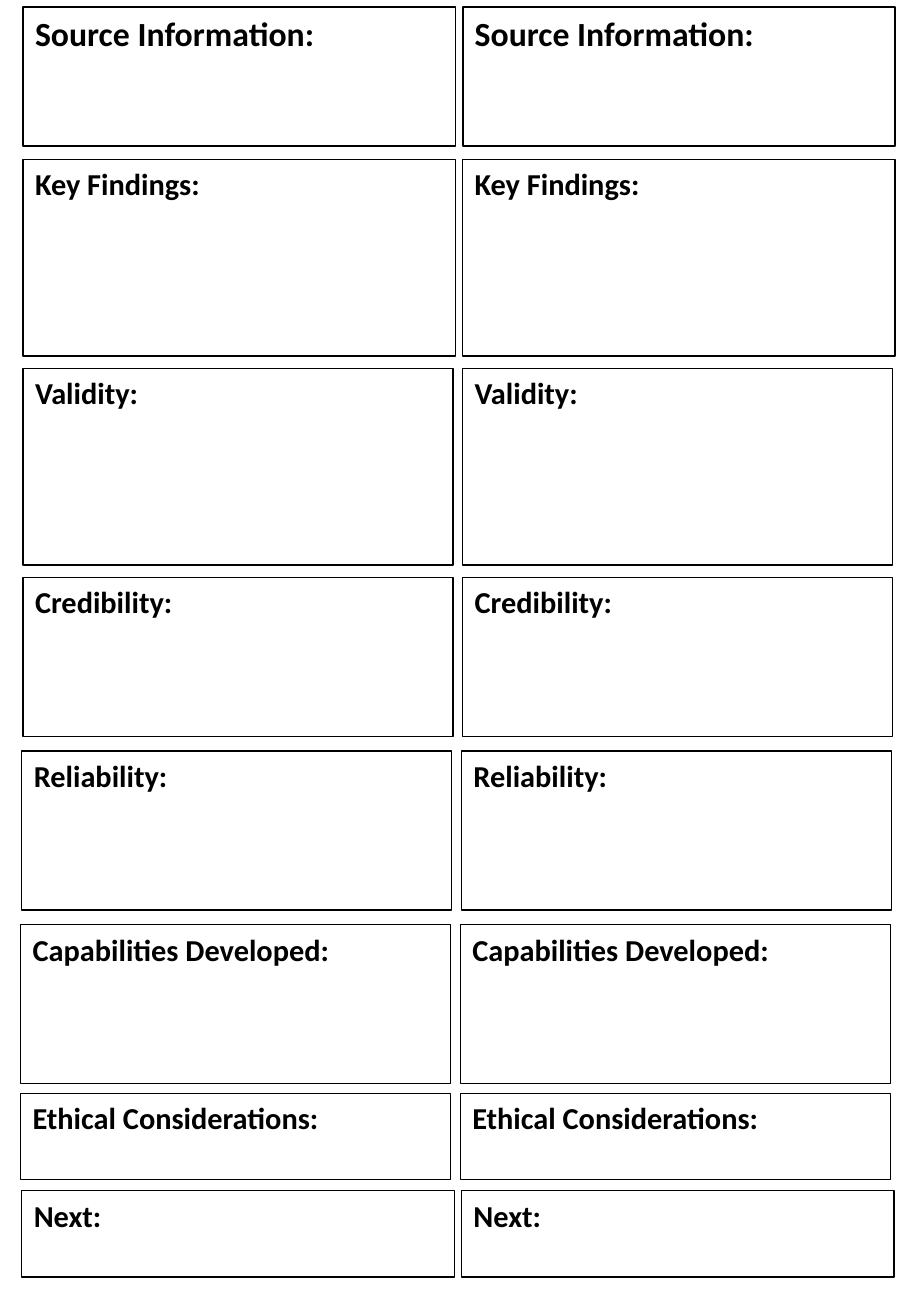
import pptx
import pptx.dml.color
import pptx.enum.text
import pptx.util
from pptx.util import Inches

BLACK = pptx.dml.color.RGBColor(0x00, 0x00, 0x00)
WHITE = pptx.dml.color.RGBColor(0xFF, 0xFF, 0xFF)
FONT = "Calibri"
COLUMN_OFFSETS = (0, 3.62)
SECTIONS = (
    ("Key Findings:", 0.19, 1.31, 3.56, 1.62),
    ("Validity:", 0.19, 3.03, 3.54, 1.62),
    ("Credibility:", 0.19, 4.75, 3.54, 1.31),
    ("Reliability:", 0.18, 6.18, 3.54, 1.31),
    ("Capabilities Developed:", 0.17, 7.61, 3.54, 1.31),
    ("Ethical Considerations:", 0.17, 9, 3.54, 0.71),
    ("Next:", 0.18, 9.8, 3.56, 0.71),
)


def resize_template(presentation, width, height):
    horizontal = width / presentation.slide_width
    vertical = height / presentation.slide_height
    presentation.slide_width = width
    presentation.slide_height = height
    for template in (*presentation.slide_layouts, presentation.slide_master):
        for shape in template.placeholders:
            left, top = shape.left, shape.top
            shape_width, shape_height = shape.width, shape.height
            shape.left = int(left * horizontal)
            shape.top = int(top * vertical)
            shape.width = int(shape_width * horizontal)
            shape.height = int(shape_height * vertical)


def format_text(text_frame, text, *, size, bold=True, color=BLACK):
    text_frame.word_wrap = True
    text_frame.auto_size = pptx.enum.text.MSO_AUTO_SIZE.NONE
    text_frame.vertical_anchor = pptx.enum.text.MSO_ANCHOR.TOP
    paragraph = text_frame.paragraphs[0]
    paragraph.alignment = pptx.enum.text.PP_ALIGN.LEFT
    run = paragraph.add_run()
    run.text = text
    run.font.name = FONT
    run.font.size = pptx.util.Pt(size)
    run.font.bold = bold
    run.font.color.rgb = color


def add_box(slide, text, left, top, width, height, *, size=18, line_width=0.75, fill=None):
    shape = slide.shapes.add_textbox(Inches(left), Inches(top), Inches(width), Inches(height))
    if fill is not None:
        shape.fill.solid()
        shape.fill.fore_color.rgb = fill
    shape.line.color.rgb = BLACK
    shape.line.width = pptx.util.Pt(line_width)
    format_text(shape.text_frame, text, size=size)


def add_column(slide, offset):
    add_box(slide, "Source Information:", 0.19 + offset, 0.06, 3.56, 1.14,
            size=20, line_width=1, fill=WHITE)
    for text, left, top, width, height in SECTIONS:
        add_box(slide, text, left + offset, top, width, height)


def main():
    presentation = pptx.Presentation()
    resize_template(presentation, Inches(7.5), Inches(10.83))
    slide = presentation.slides.add_slide(presentation.slide_layouts[6])
    for offset in COLUMN_OFFSETS:
        add_column(slide, offset)
    presentation.save("out.pptx")


if __name__ == "__main__":
    main()
